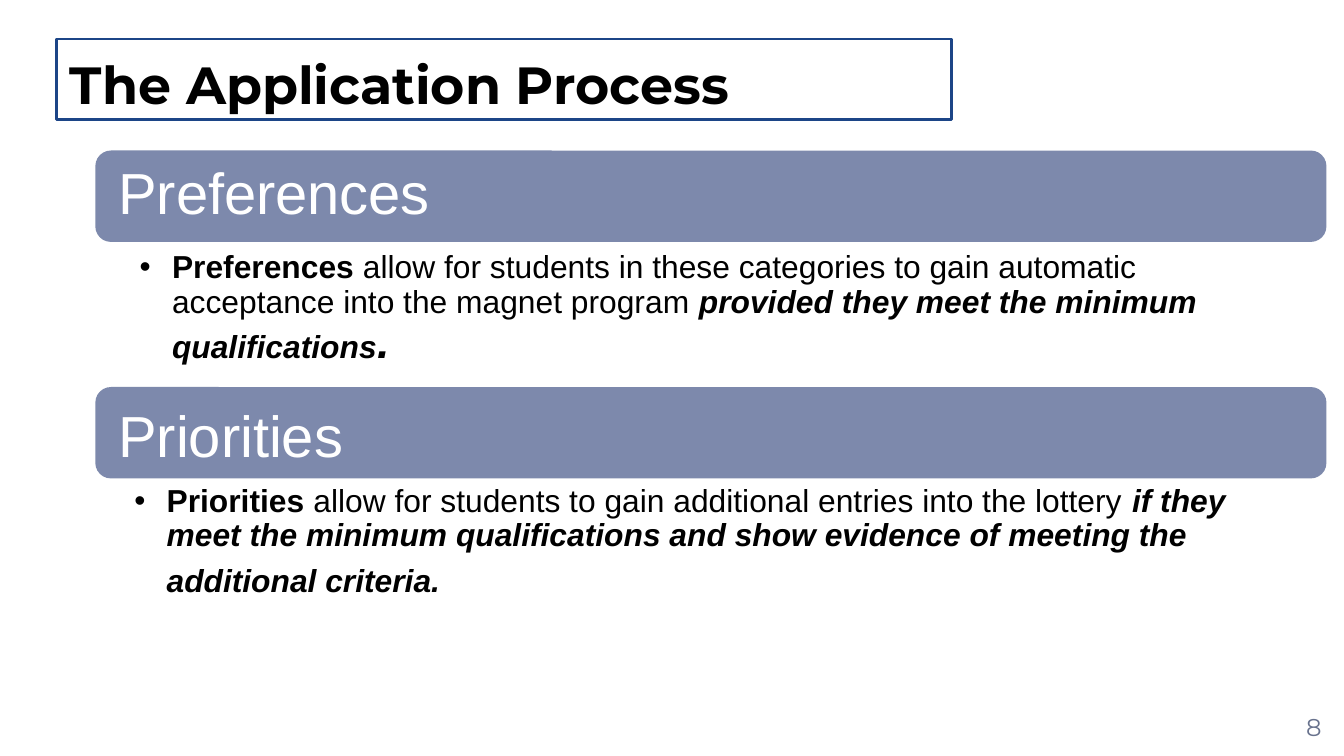
from lxml.etree import SubElement
from pptx import Presentation
from pptx.dml.color import RGBColor
from pptx.enum.shapes import MSO_SHAPE as Shape
from pptx.enum.text import MSO_ANCHOR as Anchor, MSO_AUTO_SIZE as AutoSize, PP_ALIGN as Align
from pptx.oxml.ns import qn
from pptx.util import Inches, Pt

SECTION_LEFT, SECTION_WIDTH = 0.71, 9.16
SECTIONS = [
    {
        "top": 1.12, "heading": "Preferences", "heading_offset": 0.03,
        "body_offset": (0.04, 0.71), "body_height": 0.99,
        "runs": [
            ("Preferences", 17, True, False),
            (" allow for students in these categories to gain automatic acceptance "
             "into the magnet program ", 17, False, False),
            ("provided they meet the minimum qualifications", 17, True, True),
            (".", 24, True, True),
        ],
    },
    {
        "top": 2.88, "heading": "Priorities", "heading_offset": 0.08,
        "body_offset": (0, 0.69), "body_height": 1.07,
        "runs": [
            ("Priorities ", 17, True, False),
            ("allow for students to gain additional entries into the lottery ", 17, False, False),
            ("if they meet the minimum qualifications and show evidence of meeting "
             "the additional criteria.", 17, True, True),
            (" ", 24, False, False),
        ],
    },
]


def color(value):
    """Turn a hex string into a colour."""
    return RGBColor.from_string(value)


def place(shape, left, top, width, height):
    """Move and size a shape, in inches."""
    shape.left, shape.top = Inches(left), Inches(top)
    shape.width, shape.height = Inches(width), Inches(height)


def format_frame(frame, insets, anchor):
    """Set the wrapping, margins and anchor of a text frame."""
    frame.word_wrap = True
    frame.auto_size = AutoSize.NONE
    frame.vertical_anchor = anchor
    left, top, right, bottom = (Inches(inset) for inset in insets)
    frame.margin_left, frame.margin_top = left, top
    frame.margin_right, frame.margin_bottom = right, bottom


def add_run(paragraph, text, size, font, fill, bold=False, italic=False):
    """Append one formatted run."""
    run = paragraph.add_run()
    run.text = text
    run.font.size, run.font.name = Pt(size), font
    run.font.bold, run.font.italic = bold, italic
    run.font.color.rgb = color(fill)


def add_text(slide, box, insets, anchor):
    """Add a text box and return its first paragraph."""
    frame = slide.shapes.add_textbox(*(Inches(length) for length in box)).text_frame
    format_frame(frame, insets, anchor)
    return frame.paragraphs[0]


def add_bullet(paragraph):
    """Give a second-level paragraph a black bullet with a hanging indent."""
    paragraph.level = 1
    properties = paragraph._p.get_or_add_pPr()
    properties.set("marL", str(Inches(0.24)))
    properties.set("indent", str(-Inches(0.24)))
    bullet_color = SubElement(properties, qn("a:buClr"))
    SubElement(bullet_color, qn("a:srgbClr"), val="000000")
    SubElement(properties, qn("a:buFont"), typeface="Arial")
    SubElement(properties, qn("a:buChar"), char="•")


def build_title(slide, box):
    """Place the outlined slide title."""
    title = slide.shapes.title
    place(title, *box)
    title.line.color.rgb = color("1C4587")
    title.line.width = Pt(1.5)
    format_frame(title.text_frame, (0.1,) * 4, Anchor.TOP)
    paragraph = title.text_frame.paragraphs[0]
    paragraph.alignment = Align.LEFT
    add_run(paragraph, "The Application Process", 28, "Montserrat", "000000", bold=True)


def build_section(slide, left, top, width, section):
    """Build a heading bar with its bulleted explanation."""
    bar = slide.shapes.add_shape(
        Shape.ROUNDED_RECTANGLE, Inches(left), Inches(top), Inches(width), Inches(0.68))
    bar.adjustments[0] = 0.17
    bar.shadow.inherit = False
    bar.fill.solid()
    bar.fill.fore_color.rgb = color("7D89AC")
    bar.line.fill.background()

    heading_box = (left + 0.04, top + section["heading_offset"], width - 0.08, 0.61)
    heading = add_text(slide, heading_box, (0.13,) * 4, Anchor.MIDDLE)
    heading.line_spacing = 0.9
    add_run(heading, section["heading"], 31, "Arial", "FFFFFF")

    shift, drop = section["body_offset"]
    body_box = (left + shift, top + drop, width, section["body_height"])
    body = add_text(slide, body_box, (0.29, 0.04, 0.24, 0.04), Anchor.TOP)
    add_bullet(body)
    body.line_spacing = 0.9
    for text, size, bold, italic in section["runs"]:
        add_run(body, text, size, "Arial", "000000", bold, italic)


def build_page_number(slide, box):
    """Place the page number."""
    paragraph = add_text(slide, box, (0,) * 4, Anchor.MIDDLE)
    paragraph.alignment = Align.CENTER
    add_run(paragraph, "8", 13, "Montserrat", "68728D")


def main():
    """Build and save the presentation."""
    presentation = Presentation()
    presentation.slide_width = Inches(10)
    presentation.slide_height = Inches(10) * 9 // 16
    slide = presentation.slides.add_slide(presentation.slide_layouts[5])
    for section in SECTIONS:
        build_section(slide, SECTION_LEFT, section["top"], SECTION_WIDTH, section)
    build_title(slide, (0.42, 0.29, 6.66, 0.6))
    build_page_number(slide, (9.55, 5.18, 0.45, 0.45))
    presentation.save("out.pptx")


if __name__ == "__main__":
    main()
